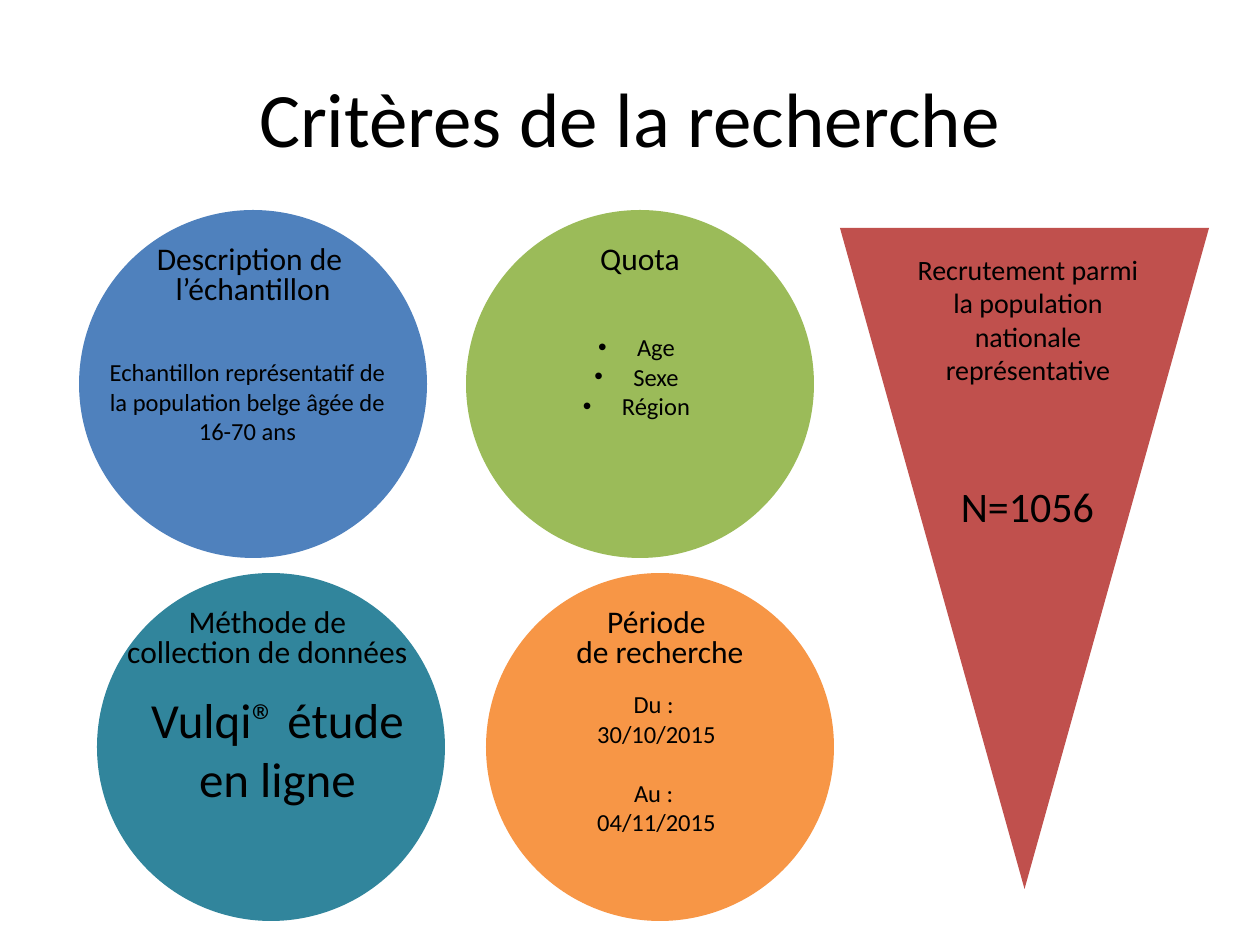
from lxml import etree
from pptx import Presentation
from pptx.dml.color import RGBColor
from pptx.enum.shapes import MSO_SHAPE as Shape
from pptx.enum.text import MSO_ANCHOR as Anchor, PP_ALIGN as Align
from pptx.oxml.ns import qn
from pptx.util import Emu, Pt

PX_PER_INCH = 126
FONT = "Calibri"
BLACK = RGBColor(0x00, 0x00, 0x00)
BLUE = RGBColor(0x4F, 0x81, 0xBD)
GREEN = RGBColor(0x9B, 0xBB, 0x59)
TEAL = RGBColor(0x31, 0x85, 0x9C)
ORANGE = RGBColor(0xF7, 0x96, 0x46)
RED = RGBColor(0xC0, 0x50, 0x4D)

DIAMETER = 348
HEADING_INSET = 273
BULLET_INDENT = 39


def px(n):
    return Emu(914400 * n // PX_PER_INCH)


def add_run(p, text, size):
    r = p.add_run()
    r.text = text
    r.font.size = Pt(size)
    r.font.name = FONT
    r.font.color.rgb = BLACK


def add_text(s, box, lines, size, anchor=Anchor.TOP):
    """Centred text box with one paragraph per line; returns the paragraphs."""
    tf = s.shapes.add_textbox(*map(px, box)).text_frame
    tf.word_wrap = True
    tf.vertical_anchor = anchor
    for i, line in enumerate(lines):
        p = tf.add_paragraph() if i else tf.paragraphs[0]
        p.alignment = Align.CENTER
        add_run(p, line, size)
    return tf.paragraphs


def add_filled(s, kind, box, color):
    sp = s.shapes.add_shape(kind, *map(px, box))
    sp.shadow.inherit = False
    sp.fill.solid()
    sp.fill.fore_color.rgb = color
    sp.line.fill.background()
    return sp


def add_bullet(p):
    ppr = p._p.get_or_add_pPr()
    ppr.set("marL", str(px(BULLET_INDENT)))
    ppr.set("indent", str(-px(BULLET_INDENT)))
    etree.SubElement(ppr, qn("a:buFont")).set("typeface", "Arial")
    etree.SubElement(ppr, qn("a:buChar")).set("char", "•")


def add_circle(s, x, y, color, heading, body_box, lines, size):
    """Circle with its heading at the top; body_box is relative to it."""
    sp = add_filled(s, Shape.OVAL, (x, y, DIAMETER, DIAMETER), color)
    tf = sp.text_frame
    tf.word_wrap = False
    tf.vertical_anchor = Anchor.TOP
    tf.margin_left = tf.margin_top = tf.margin_right = 0
    tf.margin_bottom = px(HEADING_INSET)
    p = tf.paragraphs[0]
    p.alignment = Align.CENTER
    p.line_spacing = Pt(17)
    for i, line in enumerate(heading):
        if i:
            p.add_line_break()
        add_run(p, line, 18)
    dx, dy, w, h = body_box
    return add_text(s, (x + dx, y + dy, w, h), lines, size)


def add_funnel(s, x, y, w, h):
    sp = add_filled(s, Shape.ISOSCELES_TRIANGLE, (x, y, w, h), RED)
    sp.rotation = 180
    add_text(s, (x + 64, y + 18, 248, 149),
             ["Recrutement parmi la population nationale représentative"], 16)
    add_text(s, (x + 105, y + 246, 165, 63), ["N=1056"], 24)


def main():
    prs = Presentation()
    prs.slide_width, prs.slide_height = px(1260), px(945)
    s = prs.slides.add_slide(prs.slide_layouts[6])

    add_text(s, (63, 38, 1134, 157), ["Critères de la recherche"], 44, Anchor.MIDDLE)
    add_circle(s, 79, 210, BLUE, ["Description de ", "l’échantillon"], (18, 141, 301, 102),
               ["Echantillon représentatif de la population belge âgée de 16-70 ans"], 14)
    quotas = add_circle(s, 466, 210, GREEN, ["Quota"], (20, 116, 301, 102),
                        ["Age", "Sexe", "Région"], 14)
    for p in quotas:
        add_bullet(p)
    add_circle(s, 97, 573, TEAL, ["Méthode de ", "collection de données "],
               (30, 110, 301, 131), ["Vulqi® étude", "en ligne"], 28)
    dates = add_circle(s, 486, 573, ORANGE, ["Période ", "de recherche"], (13, 110, 315, 161),
                       ["Du : ", "30/10/2015", "Au : ", "04/11/2015"], 14)
    dates[2].space_before = Pt(17)
    add_funnel(s, 840, 228, 369, 661)

    prs.save("out.pptx")


if __name__ == "__main__":
    main()
